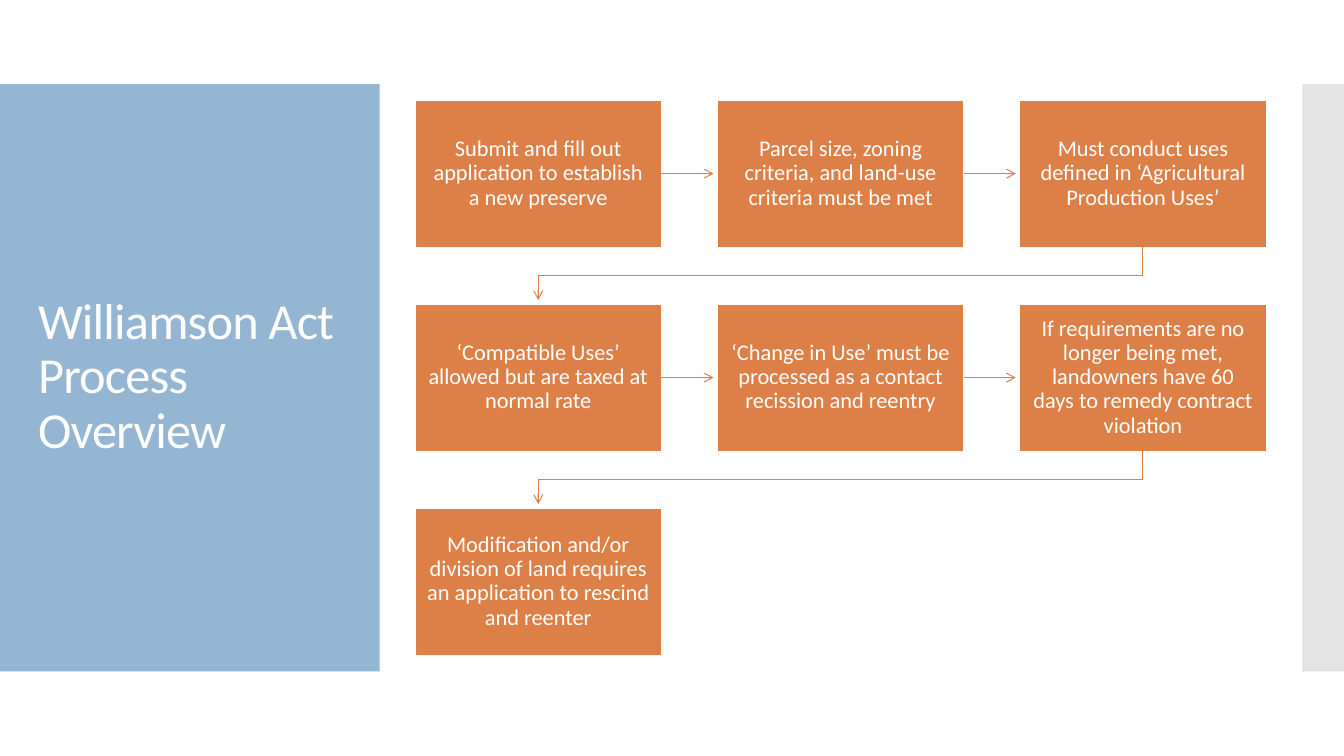
from lxml.etree import SubElement
from pptx import Presentation
from pptx.dml.color import RGBColor
from pptx.enum.shapes import MSO_CONNECTOR, MSO_SHAPE
from pptx.enum.text import MSO_ANCHOR, PP_ALIGN
from pptx.oxml.ns import qn
from pptx.util import Cm, Pt

COLORS = {
    "panel": "94B6D2",
    "edge": "C8C8C8",
    "step": "DD8047",
    "white": "FFFFFF",
}
STEPS = [
    "Submit and fill out application to establish a new preserve",
    "Parcel size, zoning criteria, and land-use criteria must be met",
    "Must conduct uses defined in ‘Agricultural Production Uses’",
    "‘Compatible Uses’ allowed but are taxed at normal rate",
    "‘Change in Use’ must be processed as a contact recission and reentry",
    "If requirements are no longer being met, landowners have 60 days to remedy contract violation",
    "Modification and/or division of land requires an application to rescind and reenter",
]
COLUMNS = 3
STEP_LEFT, STEP_TOP = Cm(10.46), Cm(2.52)
STEP_WIDTH, STEP_HEIGHT = Cm(6.21), Cm(3.71)
COLUMN_PITCH, ROW_PITCH = Cm(7.62), Cm(5.14)
BEND_DROP = Cm(0.71)
TIP_GAP = Cm(0.1)

STEP_FRAME = {
    "word_wrap": True,
    "vertical_anchor": MSO_ANCHOR.MIDDLE,
    "margin_left": Cm(0.3),
    "margin_right": Cm(0.3),
    "margin_top": Cm(0.32),
    "margin_bottom": Cm(0.32),
}
TITLE_FRAME = {"word_wrap": True, "vertical_anchor": MSO_ANCHOR.MIDDLE}
STEP_PARAGRAPH = {"alignment": PP_ALIGN.CENTER, "line_spacing": 0.9}
TITLE_PARAGRAPH = {"alignment": PP_ALIGN.LEFT, "line_spacing": 0.9}
STEP_FONT = {"name": "Calibri", "size": Pt(16)}
TITLE_FONT = {"name": "Calibri", "size": Pt(36)}


def color(name):
    return RGBColor.from_string(COLORS[name])


def apply_format(target, values):
    for attribute, value in values.items():
        setattr(target, attribute, value)


def write_text(frame, text, frame_format, paragraph_format, font_format):
    apply_format(frame, frame_format)
    paragraph = frame.paragraphs[0]
    apply_format(paragraph, paragraph_format)
    run = paragraph.add_run()
    run.text = text
    apply_format(run.font, font_format)
    run.font.color.rgb = color("white")
    return run


def add_block(slide, left, top, width, height, fill):
    block = slide.shapes.add_shape(MSO_SHAPE.RECTANGLE, left, top, width, height)
    block.shadow.inherit = False
    block.fill.solid()
    block.fill.fore_color.rgb = color(fill)
    block.line.fill.background()
    return block


def add_edge_strip(slide):
    strip = add_block(slide, Cm(32.82), Cm(2.12), Cm(1.05), Cm(14.8), "edge")
    tint = strip.element.spPr.find(qn("a:solidFill"))[0]
    SubElement(tint, qn("a:alpha"), val="50000")


def add_title(slide):
    title = slide.shapes.add_textbox(Cm(0.71), Cm(3.12), Cm(8.18), Cm(12.78))
    run = write_text(title.text_frame, "Williamson Act Process Overview",
                     TITLE_FRAME, TITLE_PARAGRAPH, TITLE_FONT)
    run.font._element.set("spc", "-60")


def add_step(slide, index, text):
    row, column = divmod(index, COLUMNS)
    step = add_block(slide, STEP_LEFT + column * COLUMN_PITCH,
                     STEP_TOP + row * ROW_PITCH, STEP_WIDTH, STEP_HEIGHT, "step")
    step.line.color.rgb = color("white")
    step.line.width = Pt(0.85)
    write_text(step.text_frame, text, STEP_FRAME, STEP_PARAGRAPH, STEP_FONT)
    return step


def style_arrow(arrow):
    arrow.line.color.rgb = color("step")
    arrow.line.width = Pt(0.75)
    SubElement(arrow.get_or_add_ln(), qn("a:tailEnd"), type="arrow")


def add_row_arrow(slide, start, end):
    middle = start.top + start.height // 2
    arrow = slide.shapes.add_connector(
        MSO_CONNECTOR.STRAIGHT, start.left + start.width, middle,
        end.left - TIP_GAP, middle)
    arrow.begin_connect(start, 3)
    style_arrow(arrow)
    SubElement(arrow.element.spPr, qn("a:effectLst"))


def add_return_arrow(slide, start, end):
    start_x = start.left + start.width // 2
    end_x = end.left + end.width // 2
    bottom = start.top + start.height
    bend = bottom + BEND_DROP
    outline = slide.shapes.build_freeform(start_x, bottom)
    outline.add_line_segments(
        [(start_x, bend), (end_x, bend), (end_x, end.top - TIP_GAP)], close=False)
    arrow = outline.convert_to_shape()
    arrow.shadow.inherit = False
    arrow.fill.background()
    style_arrow(arrow)


def main():
    deck = Presentation()
    deck.slide_width, deck.slide_height = Cm(33.87), Cm(19.05)
    slide = deck.slides.add_slide(deck.slide_layouts[6])
    add_block(slide, Cm(0), Cm(2.12), Cm(9.57), Cm(14.8), "panel")
    add_edge_strip(slide)
    add_title(slide)
    steps = [add_step(slide, index, text) for index, text in enumerate(STEPS)]
    for start, end in zip(steps, steps[1:]):
        add_arrow = add_row_arrow if start.top == end.top else add_return_arrow
        add_arrow(slide, start, end)
    deck.save("out.pptx")


if __name__ == "__main__":
    main()
